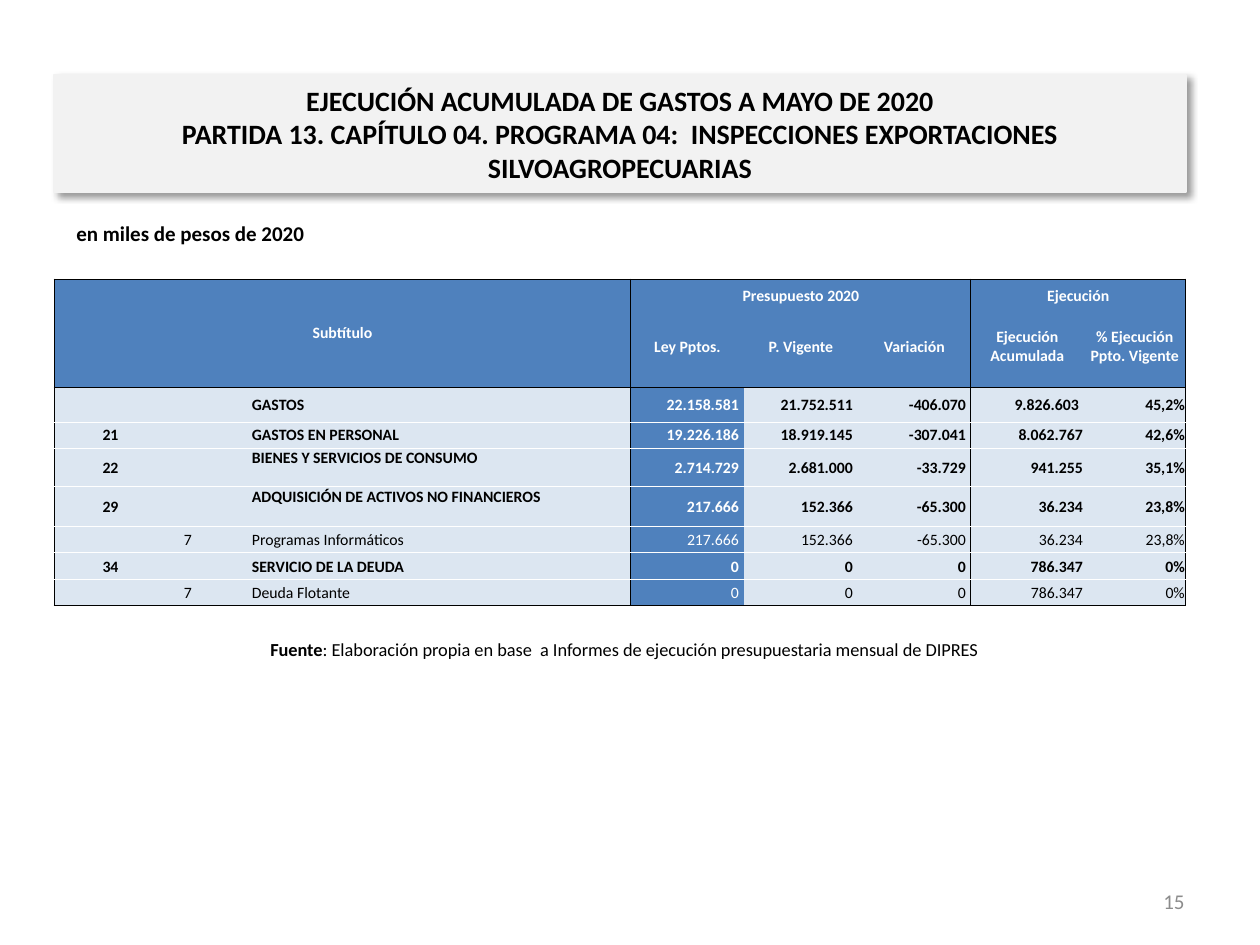
from dataclasses import dataclass

from lxml.etree import SubElement
from pptx import Presentation
from pptx.dml.color import RGBColor as RGB
from pptx.enum.text import MSO_ANCHOR as ANCHOR, PP_ALIGN as ALIGN
from pptx.oxml.ns import qn
from pptx.util import Emu, Pt


@dataclass(frozen=True)
class Theme:
    font: str = "Calibri"
    black: str = "000000"
    white: str = "FFFFFF"
    blue: str = "4F81BD"
    pale: str = "DCE6F1"
    panel: str = "F2F2F2"
    grey: str = "8C8C8C"
    title: float = 16
    label: float = 12
    source: float = 10.5
    table: float = 9
    border: float = 0.5


@dataclass(frozen=True)
class Line:
    code: str
    item: str
    name: str
    values: tuple[str, ...]
    height: int = 26
    name_anchor: ANCHOR = ANCHOR.MIDDLE
    executed_gap: int = 1


@dataclass(frozen=True)
class Label:
    box: tuple[int, int, int, int]
    runs: tuple[tuple[str, bool], ...]
    size: float
    color: str
    align: ALIGN = ALIGN.LEFT
    anchor: ANCHOR = ANCHOR.MIDDLE


T = Theme()
COLS = (113, 42, 42, 380, 113, 114, 113, 113, 102)
HEADER_HEIGHTS = (27, 81)
GROUP_STARTS, GROUP_ENDS = (0, 4, 7), (3, 6, 8)
HEADINGS = ("Ley Pptos.", "P. Vigente", "Variación", "Ejecución Acumulada",
            "% Ejecución Ppto. Vigente")
LINES = (
    Line("", "", "GASTOS", ("22.158.581", "21.752.511", "-406.070", "9.826.603", "45,2%"),
         height=35, executed_gap=5),
    Line("21", "", "GASTOS EN PERSONAL",
         ("19.226.186", "18.919.145", "-307.041", "8.062.767", "42,6%")),
    Line("22", "", "BIENES Y SERVICIOS DE CONSUMO",
         ("2.714.729", "2.681.000", "-33.729", "941.255", "35,1%"), 39, ANCHOR.TOP),
    Line("29", "", "ADQUISICIÓN DE ACTIVOS NO FINANCIEROS",
         ("217.666", "152.366", "-65.300", "36.234", "23,8%"), 40, ANCHOR.TOP),
    Line("", "7", "Programas Informáticos",
         ("217.666", "152.366", "-65.300", "36.234", "23,8%")),
    Line("34", "", "SERVICIO DE LA DEUDA", ("0", "0", "0", "786.347", "0%"), 27),
    Line("", "7", "Deuda Flotante", ("0", "0", "0", "786.347", "0%")),
)
LABELS = (
    Label((64, 631, 1121, 37),
          (("Fuente", True), (": Elaboración propia en base  a Informes de ejecución "
                              "presupuestaria mensual de DIPRES", False)),
          T.source, T.black, ALIGN.CENTER),
    Label((903, 876, 294, 50), (("15", False),), T.label, T.grey, ALIGN.RIGHT),
    Label((64, 214, 1033, 49), (("en miles de pesos de 2020", True),),
          T.label, T.black, anchor=ANCHOR.TOP),
)


def px(n: int) -> Emu:
    return Emu(round(n * 914400 / 126))


def style_run(r, size: float, color: str, bold: bool) -> None:
    r.font.name, r.font.size, r.font.bold = T.font, Pt(size), bold
    r.font.color.rgb = RGB.from_string(color)


def add_label(s, label: Label) -> None:
    tf = s.shapes.add_textbox(*map(px, label.box)).text_frame
    tf.word_wrap, tf.vertical_anchor = True, label.anchor
    p = tf.paragraphs[0]
    p.alignment = label.align
    for text, bold in label.runs:
        r = p.add_run()
        r.text = text
        style_run(r, label.size, label.color, bold)


def add_title(s, text: str) -> None:
    sp = s.shapes.title
    sp.left, sp.top, sp.width, sp.height = map(px, (54, 75, 1132, 117))
    sp.fill.solid()
    sp.fill.fore_color.rgb = sp.line.color.rgb = RGB.from_string(T.panel)
    sp.line.width = Pt(0.75)
    sp.shadow.inherit = False
    effects = sp._element.spPr.find(qn("a:effectLst"))
    shadow = SubElement(effects, qn("a:outerShdw"), blurRad=str(Pt(4)), dist=str(Pt(3)),
                        dir=str(45 * 60000), algn="tl", rotWithShape="0")
    color = SubElement(shadow, qn("a:srgbClr"), val=T.black)
    SubElement(color, qn("a:alpha"), val="40000")
    tf = sp.text_frame
    tf.word_wrap, tf.vertical_anchor = True, ANCHOR.MIDDLE
    tf.text = text
    p = tf.paragraphs[0]
    p.alignment = ALIGN.CENTER
    for r in p.runs:
        style_run(r, T.title, T.black, True)


def fill_cell(cell, text: str, fill: str, color: str, bold: bool, align: ALIGN,
              anchor: ANCHOR = ANCHOR.MIDDLE, right: int = 1) -> None:
    cell.fill.solid()
    cell.fill.fore_color.rgb = RGB.from_string(fill)
    cell.margin_left = cell.margin_top = px(1)
    cell.margin_right, cell.margin_bottom = px(right), 0
    cell.vertical_anchor = anchor
    tf = cell.text_frame
    tf.text = text
    p = tf.paragraphs[0]
    p.alignment = align
    for r in p.runs:
        style_run(r, T.table, color, bold)
    if not text:  # keeps empty cells from stretching their row
        SubElement(p._p, qn("a:endParaRPr"), sz=str(int(T.table * 100)))


def set_borders(cell, colors: dict[str, str | None]) -> None:
    tc_pr = cell._tc.get_or_add_tcPr()
    for i, (side, color) in enumerate(colors.items()):
        ln = tc_pr.makeelement(qn(f"a:{side}"), {"w": str(Pt(T.border))})
        tc_pr.insert(i, ln)
        if color:
            SubElement(SubElement(ln, qn("a:solidFill")), qn("a:srgbClr"), val=color)
        else:
            SubElement(ln, qn("a:noFill"))


def draw_borders(table, last_row: int) -> None:
    for row in range(last_row + 1):
        for col in range(len(COLS)):
            cell = table.cell(row, col)
            bottom, right = row, col
            if cell.is_merge_origin:
                bottom += cell.span_height - 1
                right += cell.span_width - 1
            set_borders(cell, {
                "lnL": T.black if col in GROUP_STARTS else None,
                "lnR": T.black if right in GROUP_ENDS else None,
                "lnT": T.black if row in (0, 2) else T.white if row > 2 else None,
                "lnB": (T.black if bottom in (1, last_row)
                        else T.white if bottom > 1 else None),
            })


def add_budget_table(s) -> None:
    heights = (*HEADER_HEIGHTS, *(line.height for line in LINES))
    frame = s.shapes.add_table(len(heights), len(COLS),
                               *map(px, (54, 279, sum(COLS), sum(heights))))
    table = frame.table
    table.first_row = table.horz_banding = False
    for column, width in zip(table.columns, COLS):
        column.width = px(width)
    for row, height in zip(table.rows, heights):
        row.height = px(height)

    # Header: merged groups above the column headings
    groups = {0: "Subtítulo", 4: "Presupuesto 2020", 7: "Ejecución"}
    for first, last in zip(GROUP_STARTS, GROUP_ENDS):
        table.cell(0, first).merge(table.cell(0 if first else 1, last))
    for col in range(len(COLS)):
        heading = HEADINGS[col - 4] if col >= 4 else ""
        for row, text in enumerate((groups.get(col, ""), heading)):
            anchor = ANCHOR.BOTTOM if row == 0 and col else ANCHOR.MIDDLE
            fill_cell(table.cell(row, col), text, T.blue, T.white, True, ALIGN.CENTER, anchor)

    # Body: codes, name and amounts
    for row, line in enumerate(LINES, len(HEADER_HEIGHTS)):
        bold = not line.item
        for col, text in enumerate((line.code, line.item, "")):
            fill_cell(table.cell(row, col), text, T.pale, T.black, bold, ALIGN.CENTER)
        fill_cell(table.cell(row, 3), line.name, T.pale, T.black, bold, ALIGN.JUSTIFY,
                  line.name_anchor)
        gaps = (5, 5, 5, line.executed_gap, 1)
        for col, (text, gap) in enumerate(zip(line.values, gaps), 4):
            fill, color = (T.blue, T.white) if col == 4 else (T.pale, T.black)
            fill_cell(table.cell(row, col), text, fill, color, bold, ALIGN.RIGHT, right=gap)
    draw_borders(table, len(heights) - 1)


def main() -> None:
    prs = Presentation()
    prs.slide_width, prs.slide_height = px(1260), px(945)
    s = prs.slides.add_slide(prs.slide_layouts[5])
    for label in LABELS:
        add_label(s, label)
    add_title(s, "EJECUCIÓN ACUMULADA DE GASTOS A MAYO DE 2020\v"
                 "PARTIDA 13. CAPÍTULO 04. PROGRAMA 04:  INSPECCIONES EXPORTACIONES "
                 "SILVOAGROPECUARIAS")
    add_budget_table(s)
    prs.save("out.pptx")


if __name__ == "__main__":
    main()
